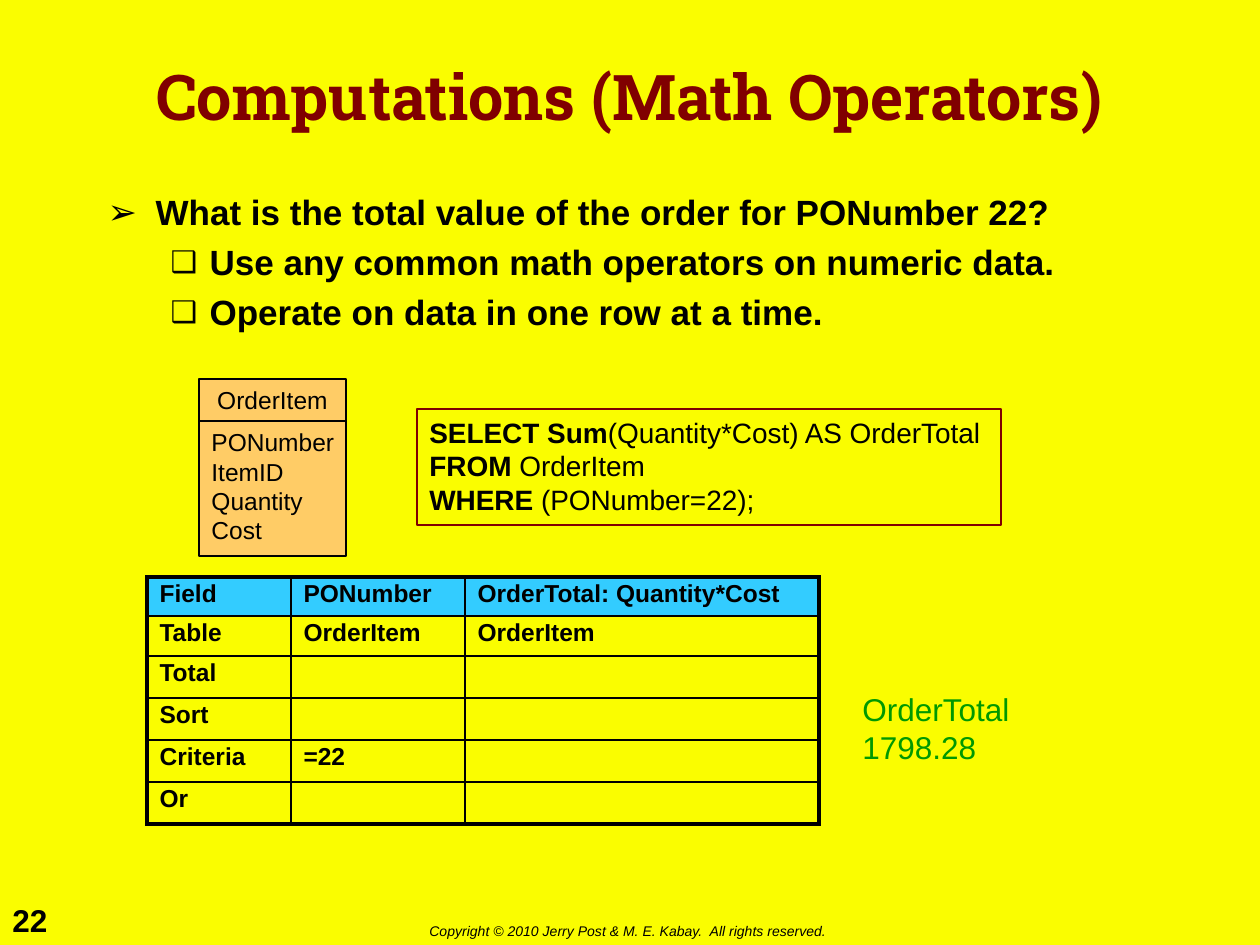
from lxml.etree import SubElement as Sub
from pptx import Presentation
from pptx.dml.color import RGBColor as Rgb
from pptx.enum.shapes import MSO_SHAPE as Kind
from pptx.enum.text import MSO_ANCHOR as Anchor, PP_ALIGN as Align
from pptx.oxml.ns import qn
from pptx.util import Pt

SCALE = 914400 / 126
INK = {
    "page": "FAFD00", "text": "000000", "title": "800000",
    "entity": "FFCC66", "head": "33CCFF", "result": "009900",
}


def px(n):
    return round(n * SCALE)


def tone(name):
    return Rgb.from_string(INK[name])


def place(shape, box):
    shape.left, shape.top, shape.width, shape.height = map(px, box)


def style(para, size, color="text", bold=False, italic=False, face="Arial"):
    font = para.font
    font.size, font.name = Pt(size), face
    font.bold, font.italic = bold, italic
    font.color.rgb = tone(color)


def write(frame, lines, size, align=Align.LEFT, **look):
    for i, line in enumerate(lines):
        para = frame.paragraphs[0] if i == 0 else frame.add_paragraph()
        para.text = line
        para.alignment = align
        style(para, size, **look)


def label(slide, box, lines, size, **look):
    frame = slide.shapes.add_textbox(*map(px, box)).text_frame
    frame.word_wrap = True
    write(frame, lines, size, **look)


def panel(shapes, box, line, fill=None, wrap=True):
    shape = shapes.add_shape(Kind.RECTANGLE, *map(px, box))
    shape.shadow.inherit = False
    if fill:
        shape.fill.solid()
        shape.fill.fore_color.rgb = tone(fill)
    else:
        shape.fill.background()
    shape.line.color.rgb = tone(line)
    shape.line.width = Pt(1)
    frame = shape.text_frame
    frame.word_wrap = wrap
    frame.vertical_anchor = Anchor.TOP
    return frame


def heading(slide, box, text):
    title = slide.shapes.title
    place(title, box)
    frame = title.text_frame
    frame.vertical_anchor = Anchor.MIDDLE
    write(frame, [text], 36, Align.CENTER, color="title", bold=True, face="Roboto Slab")
    frame.paragraphs[0].line_spacing = 0.9


def bullet(para, mark, left, hang, ratio):
    props = para._p.get_or_add_pPr()
    props.set("marL", str(px(left)))
    props.set("indent", str(-px(hang)))
    Sub(Sub(props, qn("a:buClr")), qn("a:srgbClr"), val=INK["text"])
    Sub(props, qn("a:buSzPct"), val=str(ratio * 1000))
    Sub(props, qn("a:buChar"), char=mark)


def points(slide, box, items):
    body = slide.placeholders[1]
    place(body, box)
    frame = body.text_frame
    for i, (level, text) in enumerate(items):
        para = frame.paragraphs[0] if i == 0 else frame.add_paragraph()
        para.text, para.level = text, level
        if level:
            bullet(para, "❑", 102, 39, 85)
        else:
            bullet(para, "➢", 48, 48, 100)
        para.line_spacing = 0.9
        para.space_before = Pt(7 if i else 0)
        style(para, 20, bold=True)


def entity(slide, box, name, fields):
    left, top, width, height = box
    head = 42
    group = slide.shapes.add_group_shape()
    frame = panel(group.shapes, (left, top + head, width, height - head), "text", "entity", False)
    write(frame, fields, 14)
    frame = panel(group.shapes, (left, top, width, head), "text", "entity", False)
    frame.vertical_anchor = Anchor.MIDDLE
    write(frame, [name], 14, Align.CENTER)


def query(slide, box, lines):
    frame = panel(slide.shapes, box, "title")
    for i, (key, rest) in enumerate(lines):
        para = frame.paragraphs[0] if i == 0 else frame.add_paragraph()
        para.alignment = Align.LEFT
        style(para, 16)
        for text, bold in ((key, True), (rest, False)):
            run = para.add_run()
            run.text, run.font.bold = text, bold


def border(cell, sides):
    props = cell._tc.get_or_add_tcPr()
    for side, thick in zip("LRTB", sides):
        line = Sub(props, qn("a:ln" + side), w=str(Pt(2.25 if thick else 1)))
        Sub(Sub(line, qn("a:solidFill")), qn("a:srgbClr"), val=INK["text"])


def grid(slide, spot, cols, rows, data):
    box = (*spot, sum(cols), sum(rows))
    table = slide.shapes.add_table(len(rows), len(cols), *map(px, box)).table
    table.first_row = table.horz_banding = False
    for col, width in zip(table.columns, cols):
        col.width = px(width)
    for r, height in enumerate(rows):
        table.rows[r].height = px(height)
        for c, text in enumerate(data[r]):
            cell = table.cell(r, c)
            cell.margin_top, cell.margin_bottom = px(6), 0
            write(cell.text_frame, [text], 14, bold=True)
            cell.text_frame.paragraphs[0].line_spacing = 0.9
            border(cell, (c == 0, c == len(cols) - 1, r == 0, r == len(rows) - 1))
            if r == 0:
                cell.fill.solid()
                cell.fill.fore_color.rgb = tone("head")
            else:
                cell.fill.background()


def main():
    deck = Presentation()
    deck.slide_width, deck.slide_height = px(1260), px(945)
    slide = deck.slides.add_slide(deck.slide_layouts[1])
    back = slide.background.fill
    back.solid()
    back.fore_color.rgb = tone("page")

    label(slide, (0, 895, 63, 50), ["22"], 18, bold=True)
    label(slide, (417, 916, 436, 30),
          ["Copyright © 2010 Jerry Post & M. E. Kabay.  All rights reserved."], 8, italic=True)
    heading(slide, (136, 21, 987, 158), "Computations (Math Operators)")
    points(slide, (95, 189, 1071, 136), [
        (0, "What is the total value of the order for PONumber 22?"),
        (1, "Use any common math operators on numeric data."),
        (1, "Operate on data in one row at a time."),
    ])
    query(slide, (417, 409, 584, 116), [
        ("SELECT Sum", "(Quantity*Cost) AS OrderTotal"),
        ("FROM", " OrderItem"),
        ("WHERE", " (PONumber=22);"),
    ])
    entity(slide, (199, 379, 147, 177), "OrderItem",
           ["PONumber", "ItemID", "Quantity", "Cost"])
    grid(slide, (147, 577), (144, 174, 354), (39, 40, 42, 42, 42, 42), [
        ("Field", "PONumber", "OrderTotal: Quantity*Cost"),
        ("Table", "OrderItem", "OrderItem"),
        ("Total", "", ""),
        ("Sort", "", ""),
        ("Criteria", "=22", ""),
        ("Or", "", ""),
    ])
    label(slide, (850, 684, 221, 88), ["OrderTotal", "1798.28"], 18, color="result")
    deck.save("out.pptx")


if __name__ == "__main__":
    main()
